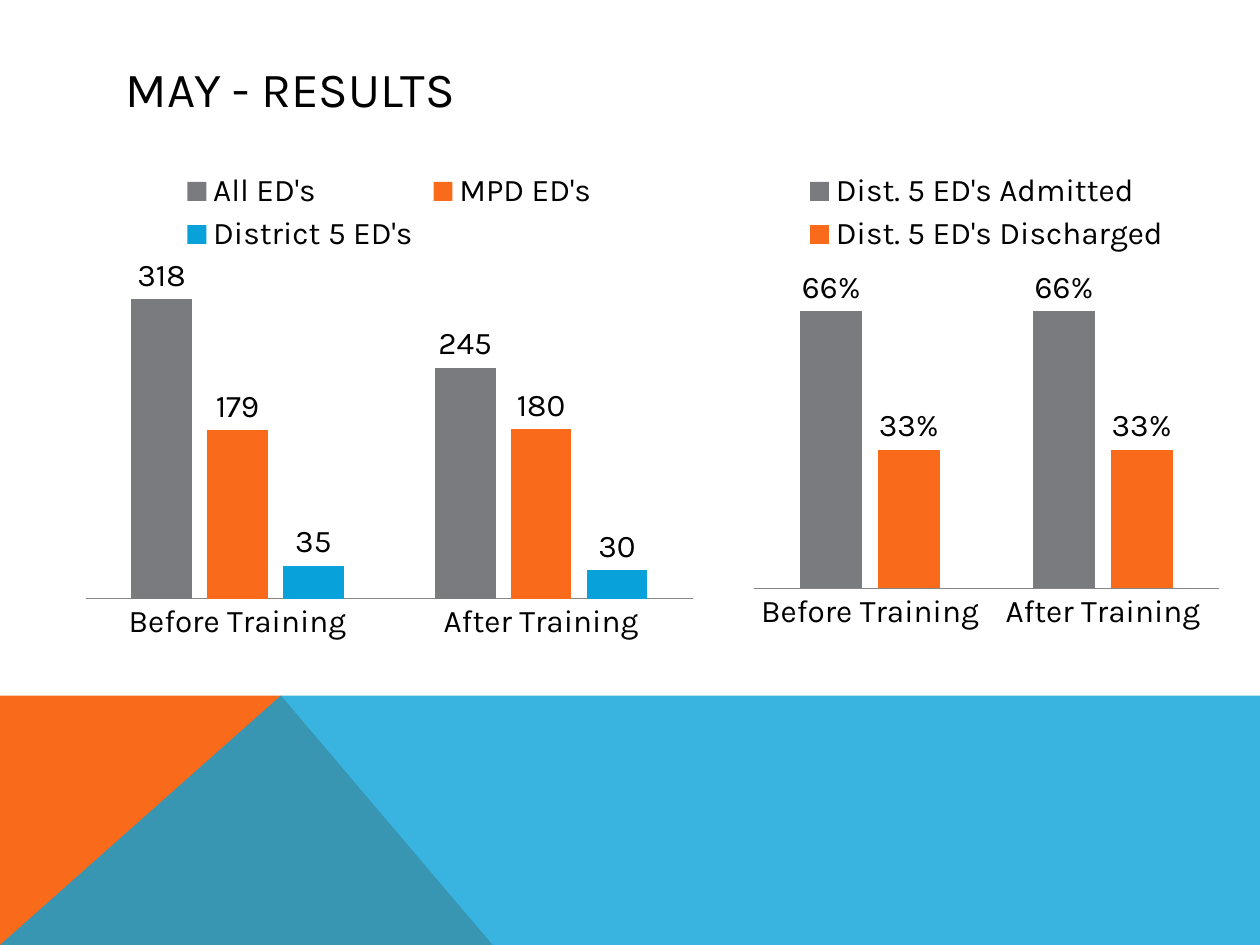
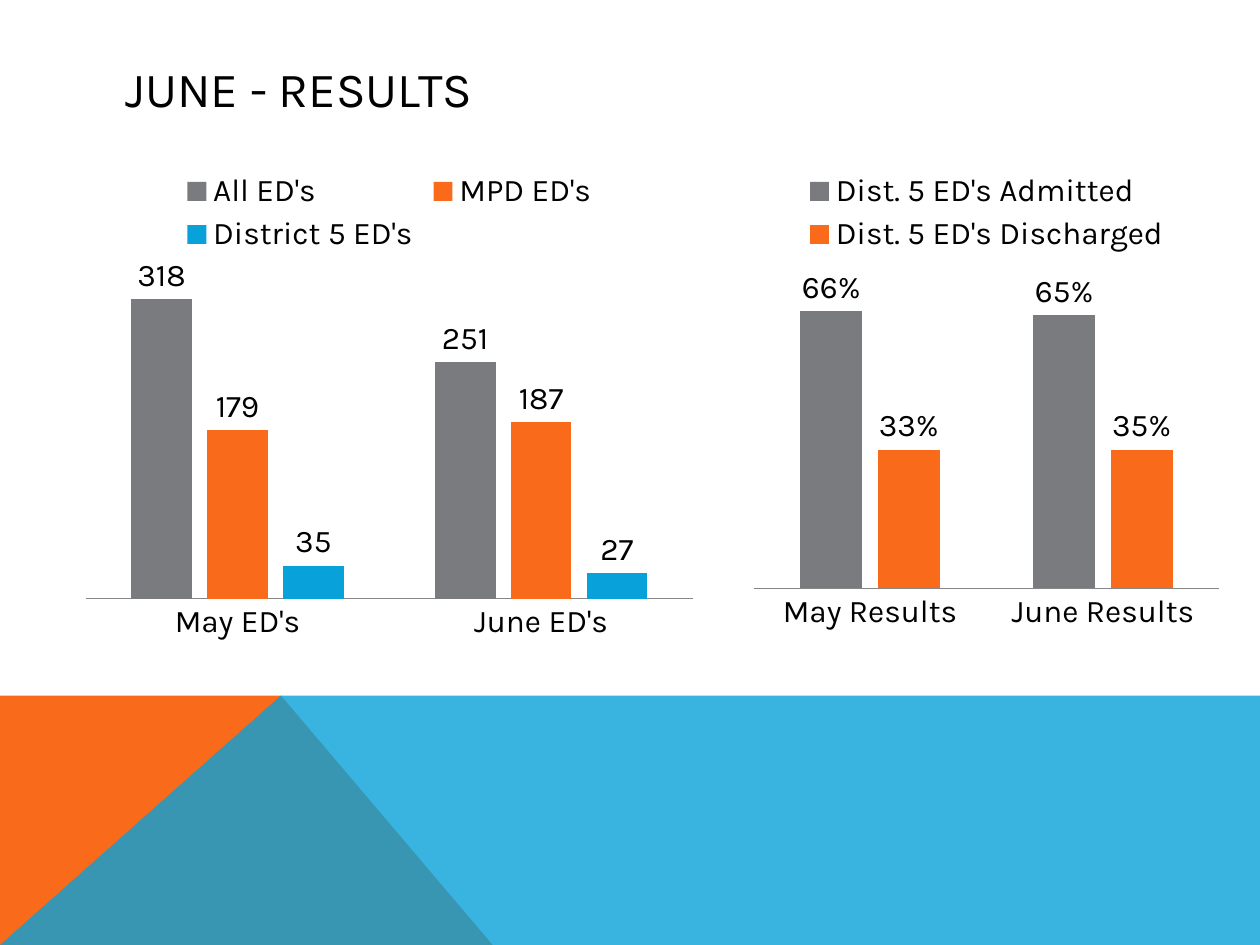
"""Build the May and June results slides."""
from lxml.etree import SubElement
from pptx import Presentation
from pptx.chart.data import CategoryChartData as Data
from pptx.dml.color import RGBColor as Rgb
from pptx.enum.chart import XL_CHART_TYPE as Kind, XL_LABEL_POSITION as Spot
from pptx.enum.chart import XL_LEGEND_POSITION as Side, XL_TICK_MARK as Tick
from pptx.enum.text import MSO_ANCHOR as Anchor
from pptx.oxml import parse_xml
from pptx.oxml.ns import nsdecls, qn
from pptx.util import Inches, Pt

HUES = {"gray": "797B7E", "orange": "F96A1B", "blue": "08A1D9",
        "black": "000000", "axis": "868686"}
FONT = "Karla"
TOP, BASE, PEAK, WIDE = 5.52, 7.5, 2.23, 10


class Deck:
    """Hold the shared style and the current slide."""

    def __init__(self):
        self.prs = Presentation()
        self.prs.slide_width = Inches(WIDE)
        self.prs.slide_height = Inches(BASE)
        self.slide = None

    def hue(self, name):
        return Rgb.from_string(HUES[name])

    def style(self, font, size):
        font.name = FONT
        font.size = Pt(size)
        font.bold = False
        font.color.rgb = self.hue("black")

    def page(self, title):
        self.slide = self.prs.slides.add_slide(self.prs.slide_layouts[6])
        self.band([(0, BASE), (0, TOP), (PEAK, TOP), (3.91, BASE)], "orange")
        self.band([(0, BASE), (PEAK, TOP), (WIDE, TOP), (WIDE, BASE)], "blue", 80)
        self.title(title)

    def band(self, dots, hue, alpha=100):
        dots = [(Inches(x), Inches(y)) for x, y in dots]
        form = self.slide.shapes.build_freeform(*dots[0])
        form.add_line_segments(dots[1:], close=True)
        shape = form.convert_to_shape()
        shape.shadow.inherit = False
        shape.line.fill.background()
        shape.fill.solid()
        shape.fill.fore_color.rgb = self.hue(hue)
        if alpha < 100:
            tint = next(shape.element.spPr.iter(qn("a:srgbClr")))
            SubElement(tint, qn("a:alpha")).set("val", str(alpha * 1000))

    def title(self, text):
        box = self.slide.shapes.add_textbox(
            Inches(0.9), Inches(0.4), Inches(8.22), Inches(0.6))
        frame = box.text_frame
        frame.word_wrap = True
        frame.vertical_anchor = Anchor.MIDDLE
        frame.text = text
        self.style(frame.paragraphs[0].font, 28)

    def chart(self, area, plot, top, form, cats, rows, notes=()):
        data = Data(number_format=form)
        data.categories = cats
        for name, vals in rows.items():
            data.add_series(name, vals)
        chart = self.slide.shapes.add_chart(
            Kind.COLUMN_CLUSTERED, *map(Inches, area), data).chart
        self.style(chart.font, 18)
        chart.has_title = False
        chart.has_legend = True
        chart.legend.position = Side.TOP
        chart.legend.include_in_layout = False
        self.axes(chart, top)
        self.place(chart, plot)
        bars = chart.plots[0]
        bars.gap_width, bars.overlap, bars.vary_by_categories = 150, -25, False
        for row, hue in zip(bars.series, ("gray", "orange", "blue")):
            row.format.fill.solid()
            row.format.fill.fore_color.rgb = self.hue(hue)
            tags = row.data_labels
            tags.show_value = True
            tags.position = Spot.OUTSIDE_END
            tags.number_format = form
            tags.number_format_is_linked = False
            self.style(tags.font, 18)
        for row, spot, text in notes:
            tag = bars.series[row].points[spot].data_label
            tag.text_frame.text = text
            self.style(tag.text_frame.paragraphs[0].runs[0].font, 18)
            tag.position = Spot.OUTSIDE_END

    def axes(self, chart, top):
        value, cat = chart.value_axis, chart.category_axis
        value.visible = False
        value.has_major_gridlines = False
        value.minimum_scale, value.maximum_scale = 0, top
        cat.major_tick_mark = cat.minor_tick_mark = Tick.NONE
        cat.format.line.color.rgb = self.hue("axis")
        cat.format.line.width = Pt(0.75)

    def place(self, chart, plot):
        area = chart.element.chart.plotArea
        for old in area.findall(qn("c:layout")):
            area.remove(old)
        sizes = "".join(f'<c:{key} val="{val}"/>' for key, val in zip("xywh", plot))
        area.insert(0, parse_xml(
            f'<c:layout {nsdecls("c")}><c:manualLayout>'
            '<c:layoutTarget val="inner"/><c:xMode val="edge"/>'
            f'<c:yMode val="edge"/>{sizes}</c:manualLayout></c:layout>'))

    def counts(self, cats, total, mpd, local):
        rows = {"All ED's": total, "MPD ED's": mpd, "District 5 ED's": local}
        self.chart((0.58, 1.25, 5.02, 3.91), (0.02, 0.226, 0.96, 0.67),
                   350, "General", cats, rows)

    def rates(self, cats, kept, freed, notes=()):
        rows = {"Dist. 5 ED's Admitted": kept, "Dist. 5 ED's Discharged": freed}
        self.chart((5.83, 1.25, 4, 3.94), (0.038, 0.276, 0.924, 0.592),
                   0.7, "0%", cats, rows, notes)


def main():
    deck = Deck()
    spans = ("Before Training", "After Training")
    deck.page("MAY - RESULTS")
    deck.counts(spans, (318, 245), (179, 180), (35, 30))
    deck.rates(spans, (0.66, 0.66), (0.33, 0.33))
    deck.page("JUNE - RESULTS")
    deck.counts(("May ED's", "June ED's"), (318, 251), (179, 187), (35, 27))
    deck.rates(("May Results", "June Results"), (0.66, 0.65), (0.33, 0.33),
               [(1, 1, "35%")])
    deck.prs.save("out.pptx")


if __name__ == "__main__":
    main()
